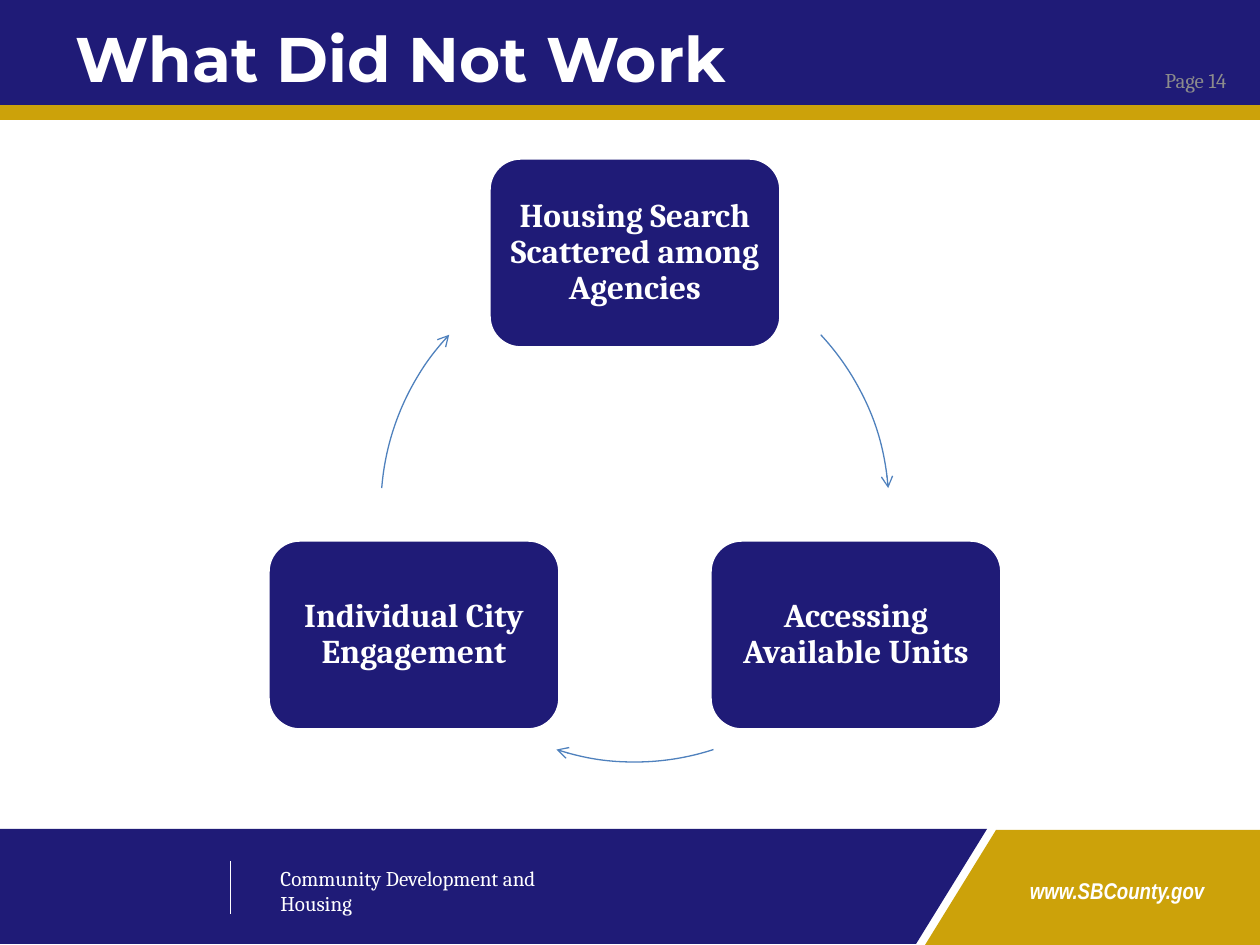
"""Build the "What Did Not Work" slide: a three-step cycle between a header and a footer."""
import dataclasses
import typing

import pptx
import pptx.dml.color
import pptx.enum.shapes
import pptx.enum.text
import pptx.oxml
import pptx.oxml.ns
import pptx.util

SCALE = 914400 / 126
NAVY, GOLD, WHITE, GREY, BLUE = "1F1B77", "CCA20A", "FFFFFF", "8C8C8C", "4F81BD"
KIND = pptx.enum.shapes.MSO_SHAPE
ALIGN = pptx.enum.text.PP_ALIGN
ANCHOR = pptx.enum.text.MSO_ANCHOR


class Box(typing.NamedTuple):
    """A place on the slide, in px."""
    left: int
    top: int
    width: int
    height: int


@dataclasses.dataclass
class Panel:
    """A plain filled shape of the header or footer."""
    box: Box
    color: str
    kind: int = KIND.RECTANGLE
    turn: int = 0


@dataclasses.dataclass
class Label:
    """A line of text with its font and its place."""
    text: str
    box: Box
    size: int
    font: str = "Cambria"
    color: str = WHITE
    bold: bool = False
    slant: bool = False
    align: int = ALIGN.LEFT
    anchor: int = ANCHOR.TOP


class Arc(typing.NamedTuple):
    """Start and end angles of a cycle arrow, in degrees."""
    start: float
    end: float


PANELS = [
    Panel(Box(0, 99, 1260, 21), GOLD),
    Panel(Box(0, 0, 1260, 105), NAVY),
    Panel(Box(996, 830, 264, 115), GOLD),
    Panel(Box(903, 852, 115, 71), GOLD, KIND.RIGHT_TRIANGLE, 270),
    Panel(Box(0, 829, 916, 115), NAVY),
    Panel(Box(894, 851, 115, 71), NAVY, KIND.RIGHT_TRIANGLE, 90),
]
LABELS = [
    Label("www.SBCounty.gov", Box(975, 871, 284, 40), 13, "Arial Narrow",
          bold=True, slant=True, align=ALIGN.CENTER),
    Label("Page 14", Box(1092, 55, 147, 50), 12, color=GREY,
          align=ALIGN.RIGHT, anchor=ANCHOR.MIDDLE),
    Label("Community Development and Housing", Box(268, 859, 349, 38), 12),
    Label("What Did Not Work", Box(63, 0, 1134, 115), 36, "Montserrat",
          bold=True, anchor=ANCHOR.MIDDLE),
]
STEPS = [
    Label(text, Box(left, top, 292, 190), 19, bold=True,
          align=ALIGN.CENTER, anchor=ANCHOR.MIDDLE)
    for text, left, top in [
        ("Housing Search Scattered among Agencies", 489, 158),
        ("Accessing Available Units", 710, 540),
        ("Individual City Engagement", 268, 540),
    ]
]
RING = Box(381, 254, 508, 508)
ARCS = [Arc(317, 355.5), Arc(72, 108), Arc(184.5, 223)]


def px(size: int) -> int:
    """Turn px into EMU."""
    return round(size * SCALE)


def place(box: Box) -> list[int]:
    """Turn a box into EMU lengths."""
    return [px(size) for size in box]


def tint(code: str) -> pptx.dml.color.RGBColor:
    """Turn a hex string into a colour."""
    return pptx.dml.color.RGBColor.from_string(code)


def draw_panel(shapes, panel: Panel):
    """Draw a filled shape without an outline."""
    shape = shapes.add_shape(panel.kind, *place(panel.box))
    shape.shadow.inherit = False
    shape.fill.solid()
    shape.fill.fore_color.rgb = tint(panel.color)
    shape.line.fill.background()
    shape.rotation = panel.turn
    return shape


def write(shape, label: Label) -> None:
    """Write a label into a shape."""
    frame = shape.text_frame
    frame.word_wrap = True
    frame.vertical_anchor = label.anchor
    para = frame.paragraphs[0]
    para.alignment = label.align
    run = para.add_run()
    run.text = label.text
    font = run.font
    font.name, font.size = label.font, pptx.util.Pt(label.size)
    font.bold, font.italic = label.bold, label.slant
    font.color.rgb = tint(label.color)


def draw_step(shapes, step: Label) -> None:
    """Draw one rounded box of the cycle."""
    shape = draw_panel(shapes, Panel(step.box, NAVY, KIND.ROUNDED_RECTANGLE))
    shape.line.color.rgb = tint(WHITE)
    shape.line.width = pptx.util.Pt(2)
    write(shape, step)
    frame = shape.text_frame
    frame.margin_left = frame.margin_right = px(10)
    frame.margin_top = frame.margin_bottom = px(10)
    frame.paragraphs[0].line_spacing = 0.9


def draw_arc(shapes, arc: Arc) -> None:
    """Draw one curved arrow of the cycle."""
    shape = shapes.add_shape(KIND.ARC, *place(RING))
    shape.shadow.inherit = False
    shape.fill.background()
    for spot, angle in enumerate(arc):
        shape.adjustments[spot] = angle * 0.6
    shape.line.color.rgb = tint(BLUE)
    shape.line.width = pptx.util.Pt(0.75)
    line = shape.line.fill._xPr
    space = pptx.oxml.ns.nsdecls("a")
    line.append(pptx.oxml.parse_xml(f'<a:tailEnd {space} type="arrow"/>'))


def draw_rule(shapes) -> None:
    """Draw the upright rule in the footer."""
    rule = shapes.add_connector(pptx.enum.shapes.MSO_CONNECTOR.STRAIGHT,
                                px(230), px(861), px(230), px(914))
    rule.line.color.rgb = tint(WHITE)
    rule.line.width = pptx.util.Pt(0.25)
    space = pptx.oxml.ns.nsdecls("a")
    rule._element.spPr.append(pptx.oxml.parse_xml(f"<a:effectLst {space}/>"))


def main() -> None:
    """Build and save the slide."""
    deck = pptx.Presentation()
    deck.slide_width, deck.slide_height = px(1260), px(945)
    shapes = deck.slides.add_slide(deck.slide_layouts[6]).shapes
    for panel in PANELS:
        draw_panel(shapes, panel)
    draw_rule(shapes)
    for label in LABELS:
        write(shapes.add_textbox(*place(label.box)), label)
    for step, arc in zip(STEPS, ARCS):
        draw_step(shapes, step)
        draw_arc(shapes, arc)
    deck.save("out.pptx")


if __name__ == "__main__":
    main()
